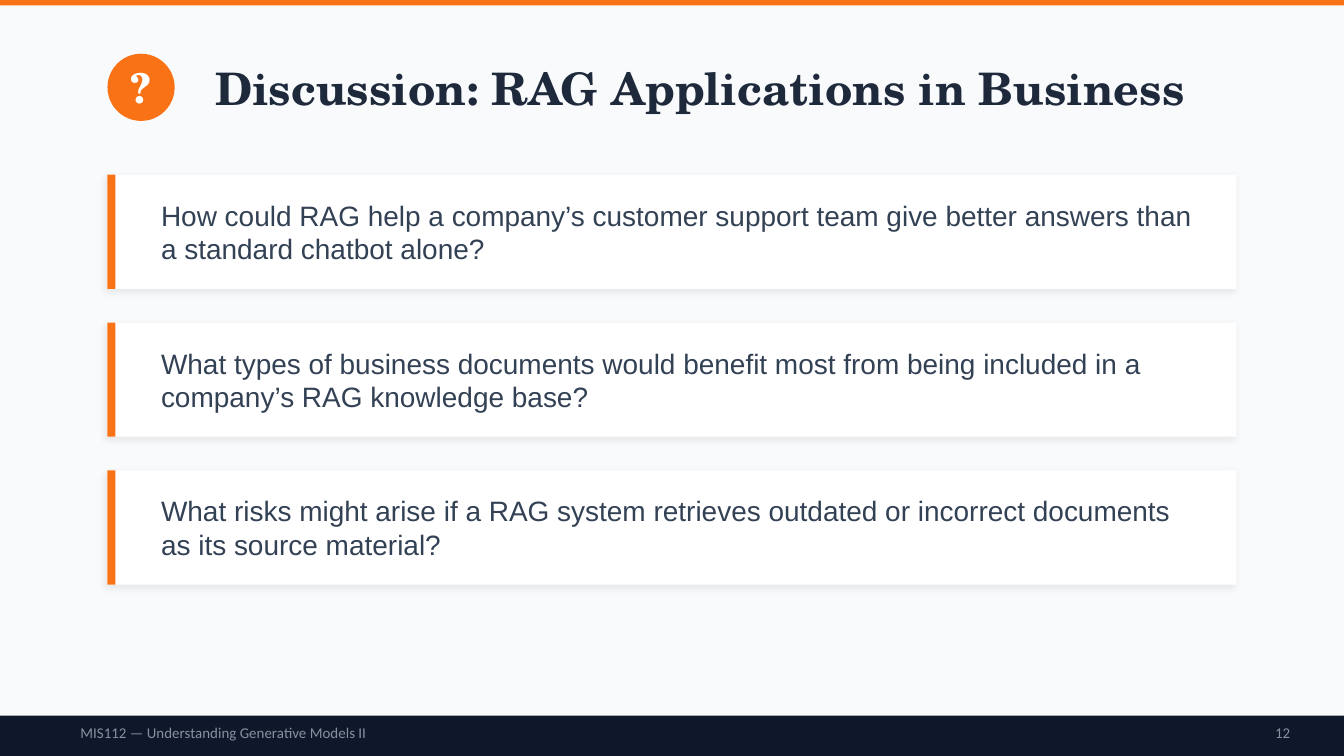
from dataclasses import dataclass

from lxml import etree
from pptx import Presentation
from pptx.dml.color import RGBColor
from pptx.enum.shapes import MSO_SHAPE as Shape
from pptx.enum.text import MSO_ANCHOR as Anchor, MSO_AUTO_SIZE as AutoSize, PP_ALIGN as Align
from pptx.oxml import parse_xml
from pptx.oxml.ns import nsdecls
from pptx.util import Pt

PX = 4572  # EMU per px, 200 px to the inch


@dataclass(frozen=True)
class Theme:
    background: str = "F8FAFC"
    accent: str = "F97316"
    card: str = "FFFFFF"
    footer: str = "0F172A"
    serif: str = "TeX Gyre Schola"

    def text(self, role):
        name, size, color, bold = {
            "badge": (self.serif, 22, "FFFFFF", True),
            "title": (self.serif, 24, "1E293B", True),
            "question": ("Arial", 15, "334155", False),
            "footer": ("Calibri", 8, "8891A0", False),
        }[role]
        return {"name": name, "size": Pt(size), "bold": bold}, RGBColor.from_string(color)


theme = Theme()

presentation = Presentation()
presentation.slide_width, presentation.slide_height = 2000 * PX, 1125 * PX
slide = presentation.slides.add_slide(presentation.slide_layouts[5])
slide.background.fill.solid()
slide.background.fill.fore_color.rgb = RGBColor.from_string(theme.background)


def add_block(kind, box, color):
    shape = slide.shapes.add_shape(kind, *(value * PX for value in box))
    shape.shadow.inherit = False
    shape.fill.solid()
    shape.fill.fore_color.rgb = RGBColor.from_string(color)
    shape.line.fill.background()
    return shape


def write_text(text, box, role, align=Align.LEFT, shape=None):
    left, top, width, height = (value * PX for value in box)
    shape = shape or slide.shapes.add_textbox(left, top, width, height)
    shape.left, shape.top, shape.width, shape.height = left, top, width, height
    frame = shape.text_frame
    frame.text = text
    frame_format = {"word_wrap": True, "auto_size": AutoSize.NONE, "vertical_anchor": Anchor.MIDDLE}
    for key, value in frame_format.items():
        setattr(frame, key, value)
    paragraph = frame.paragraphs[0]
    paragraph.alignment = align
    font = paragraph.runs[0].font
    font_format, color = theme.text(role)
    for key, value in font_format.items():
        setattr(font, key, value)
    font.color.rgb = color


# Top bar, badge and title
add_block(Shape.RECTANGLE, (0, 0, 2000, 8), theme.accent)
badge_box = (160, 80, 100, 100)
add_block(Shape.OVAL, badge_box, theme.accent)
write_text("?", badge_box, "badge", Align.CENTER)
write_text("Discussion: RAG Applications in Business", (300, 80, 1600, 100), "title",
           shape=slide.shapes.title)

# Question cards
questions = [
    "How could RAG help a company’s customer support team give better answers than a standard chatbot alone?",
    "What types of business documents would benefit most from being included in a company’s RAG knowledge base?",
    "What risks might arise if a RAG system retrieves outdated or incorrect documents as its source material?",
]
card_top, card_pitch, card_height = 260, 220, 170
shadow_xml = (
    f'<a:effectLst {nsdecls("a")}>'
    f'<a:outerShdw blurRad="{Pt(4)}" dist="{Pt(2)}" dir="{135 * 60000}" algn="bl" rotWithShape="0">'
    '<a:srgbClr val="000000"><a:alpha val="8000"/></a:srgbClr></a:outerShdw></a:effectLst>'
)
for index, question in enumerate(questions):
    top = card_top + index * card_pitch
    card = add_block(Shape.RECTANGLE, (160, top, 1680, card_height), theme.card)
    properties = card._element.spPr
    effects = properties.find("{*}effectLst")
    properties.replace(effects, parse_xml(shadow_xml))
    add_block(Shape.RECTANGLE, (160, top, 12, card_height), theme.accent)
    write_text(question, (220, top + 20, 1580, card_height - 40), "question")

# Footer
add_block(Shape.RECTANGLE, (0, 1065, 2000, 60), theme.footer)
write_text("MIS112 — Understanding Generative Models II", (100, 1065, 1100, 50), "footer")
write_text("12", (1840, 1065, 100, 50), "footer", Align.RIGHT)

presentation.save("out.pptx")
